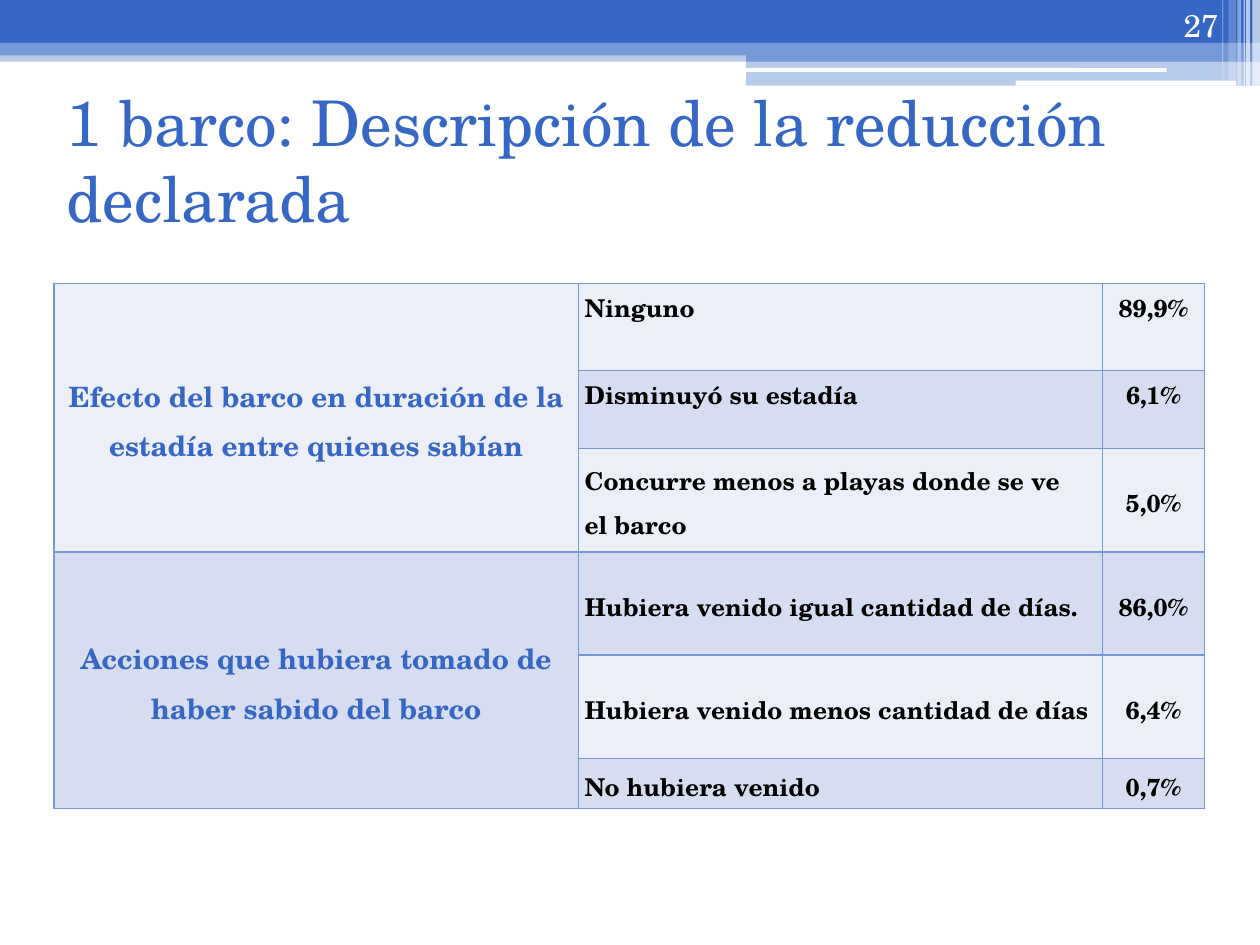
from pptx import Presentation
from pptx.util import Inches, Pt
from pptx.dml.color import RGBColor as RGB
from pptx.enum.shapes import MSO_SHAPE as Shape
from pptx.enum.text import PP_ALIGN as Align, MSO_ANCHOR as Anchor
from pptx.oxml.ns import qn
from lxml.etree import SubElement as Sub

# Content
TITLE = "1 barco: Descripción de la reducción declarada"
NUMBER = "27"
GROUPS = [
    ("Efecto del barco en duración de la estadía entre quienes sabían", [
        ("Ninguno", "89,9%", 0.69, "top"),
        ("Disminuyó su estadía", "6,1%", 0.62, "top"),
        ("Concurre menos a playas donde se ve\nel barco", "5,0%", 0.82, "mid")]),
    ("Acciones que hubiera tomado de haber sabido del barco", [
        ("Hubiera venido igual cantidad de días.", "86,0%", 0.82, "mid"),
        ("Hubiera venido menos cantidad de días", "6,4%", 0.82, "mid"),
        ("No hubiera venido", "0,7%", 0.4, "mid")]),
]
COLS = [4.16, 4.16, 0.81]

# Style
FONT = "TeX Gyre Schola"
HEX = {"blue": "3667C4", "sky": "7598D9", "white": "FFFFFF",
       "black": "000000", "pale": "ECEFF8", "tint": "D6DDF1"}
ANCHOR = {"top": Anchor.TOP, "mid": Anchor.MIDDLE, "low": Anchor.BOTTOM}
HEAD = {"size": Pt(16), "bold": True, "color": "blue"}
BODY = {"size": Pt(14), "bold": True, "color": "black"}

# Header bands: left, top, width, height, colour, opacity
BANDS = [
    (0, 0.4, 10, 0.09, "sky", 50),
    (0, 0, 10, 0.34, "blue", 100),
    (0, 0.34, 10, 0.1, "sky", 100),
    (5.92, 0.39, 4.08, 0.1, "sky", 100),
    (5.92, 0.48, 4.08, 0.2, "sky", 50),
]
PILLS = [(5.91, 0.54, 3.35, 0.03, "white", 100),
         (8.06, 0.64, 1.75, 0.04, "white", 100)]
# Stripes at the right edge: left, width, height, opacity
STRIPES = [(9.94, 0.06, 0.68, 65), (9.89, 0.03, 0.68, 65), (9.87, 0.01, 0.68, 60),
           (9.82, 0.03, 0.68, 40), (9.75, 0.06, 0.64, 20), (9.7, 0.01, 0.64, 30)]


def color(name):
    return RGB.from_string(HEX[name])


def block(kind, x, y, w, h, tone, alpha):
    shape = slide.shapes.add_shape(kind, Inches(x), Inches(y), Inches(w), Inches(h))
    shape.shadow.inherit = False
    shape.line.fill.background()
    shape.fill.solid()
    shape.fill.fore_color.rgb = color(tone)
    if alpha < 100:
        rgb = shape.fill._xPr.find(qn("a:solidFill"))[0]
        Sub(rgb, qn("a:alpha"), val=str(alpha * 1000))


def write(frame, text, form, align, space=None):
    frame.word_wrap = True
    for i, line in enumerate(text.split("\n")):
        para = frame.add_paragraph() if i else frame.paragraphs[0]
        para.alignment = align
        if space:
            para.line_spacing = space
        run = para.add_run()
        run.text = line
        for key, value in {"name": FONT, **form}.items():
            if key == "color":
                run.font.color.rgb = color(value)
            else:
                setattr(run.font, key, value)


def label(x, y, w, h, text, form, align, anchor):
    frame = slide.shapes.add_textbox(Inches(x), Inches(y), Inches(w), Inches(h)).text_frame
    frame.vertical_anchor = ANCHOR[anchor]
    write(frame, text, form, align)


def fill_cell(cell, text, form, align, tone, anchor="mid"):
    margins = {"margin_left": 0.05, "margin_right": 0.05, "margin_top": 0, "margin_bottom": 0}
    for key, value in margins.items():
        setattr(cell, key, Inches(value))
    cell.vertical_anchor = ANCHOR[anchor]
    write(cell.text_frame, text, form, align, 1.15)
    border(cell)
    cell.fill.solid()
    cell.fill.fore_color.rgb = color(tone)


def border(cell):
    props = cell._tc.get_or_add_tcPr()
    for side in ("lnL", "lnR", "lnT", "lnB"):
        line = Sub(props, qn("a:" + side), w=str(Pt(1)))
        Sub(Sub(line, qn("a:solidFill")), qn("a:srgbClr"), val=HEX["sky"])


deck = Presentation()
deck.slide_width, deck.slide_height = Inches(10), Inches(7.5)
slide = deck.slides.add_slide(deck.slide_layouts[6])

# Header
for band in BANDS:
    block(Shape.RECTANGLE, *band)
for pill in PILLS:
    block(Shape.ROUNDED_RECTANGLE, *pill)
for x, w, h, alpha in STRIPES:
    block(Shape.RECTANGLE, x, 0, w, h, "white", alpha)

# Title
label(0.43, 0.68, 9.29, 1.17, TITLE, {"size": Pt(36), "color": "blue"}, Align.LEFT, "mid")

# Table
rows = [row for _, part in GROUPS for row in part]
high = sum(row[2] for row in rows)
table = slide.shapes.add_table(len(rows), len(COLS), Inches(0.43), Inches(2.25),
                               Inches(sum(COLS)), Inches(high)).table
for col, w in zip(table.columns, COLS):
    col.width = Inches(w)
for r, (text, share, h, anchor) in enumerate(rows):
    tone = ("pale", "tint")[r % 2]
    table.rows[r].height = Inches(h)
    fill_cell(table.cell(r, 1), text, BODY, Align.LEFT, tone, anchor)
    fill_cell(table.cell(r, 2), share, BODY, Align.CENTER, tone, anchor)
top = 0
for i, (head, part) in enumerate(GROUPS):
    end = top + len(part) - 1
    table.cell(top, 0).merge(table.cell(end, 0))
    fill_cell(table.cell(top, 0), head, HEAD, Align.CENTER, ("pale", "tint")[i])
    for r in range(top + 1, end + 1):
        border(table.cell(r, 0))
    top = end + 1

# Slide number
label(8.94, 0, 0.83, 0.4, NUMBER, {"size": Pt(18), "color": "white"}, Align.RIGHT, "low")

deck.save("out.pptx")
